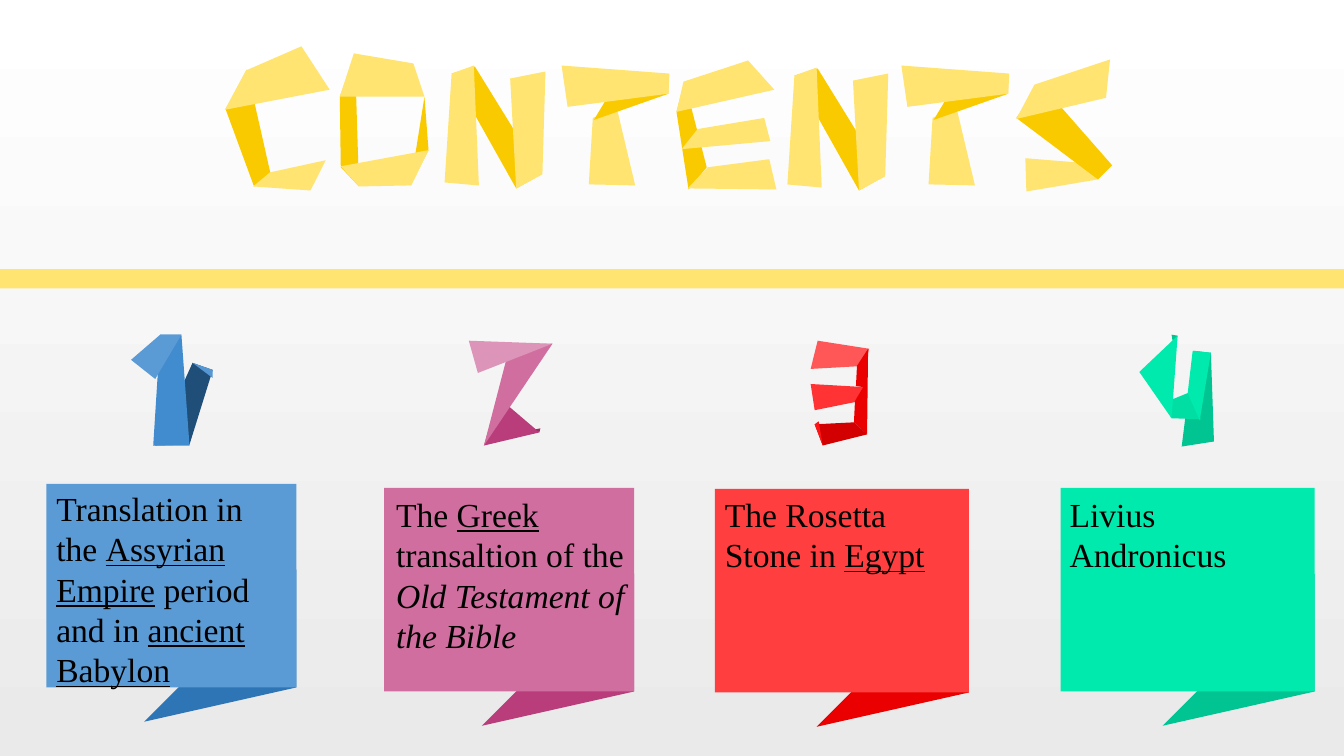
from dataclasses import dataclass

from pptx import Presentation
from pptx import util as u
from pptx.dml.color import RGBColor
from pptx.enum import shapes, text


@dataclass(frozen=True)
class Theme:
    font: str = "Times New Roman"
    body_size: int = 24
    ink: str = "000000"
    paper: tuple = ("FFFFFF", "EAEAEA")
    light: str = "FFE471"
    fold: str = "FACA00"
    blues: tuple = ("5B9BD5", "2E75B6", "1F4E79", "418BCF", "5597D3")
    pinks: tuple = ("D06E9F", "B93D7B", "DC94B8", "9A3266")
    reds: tuple = ("FF3F3F", "EA0000", "FF3333", "FF5757", "D20000", "FF1515")
    greens: tuple = ("00EAAD", "00C491", "00DEA4")


class SlideBuilder:
    def __init__(self, slide, theme):
        self.slide = slide
        self.theme = theme

    def background(self):
        fill = self.slide.background.fill
        fill.gradient()
        fill.gradient_angle = 270
        for stop, color in zip(fill.gradient_stops, self.theme.paper):
            stop.color.rgb = RGBColor.from_string(color)

    def group(self):
        return self.slide.shapes.add_group_shape().shapes

    def paint(self, shape, color):
        shape.shadow.inherit = False
        shape.fill.solid()
        shape.fill.fore_color.rgb = RGBColor.from_string(color)
        shape.line.fill.background()

    def rectangle(self, parent, left, top, width, height, color):
        box = [u.Inches(length) for length in (left, top, width, height)]
        self.paint(parent.add_shape(shapes.MSO_SHAPE.RECTANGLE, *box), color)

    def polygon(self, parent, color, points, dx=0, dy=0):
        corners = [(u.Inches(x + dx), u.Inches(y + dy)) for x, y in points]
        builder = parent.build_freeform(*corners[0])
        builder.add_line_segments(corners[1:], close=True)
        self.paint(builder.convert_to_shape(), color)

    def folded_figure(self, parent, pieces, dx=0, dy=0):
        for color, points in pieces:
            self.polygon(parent, color, points, dx, dy)

    def speech_card(self, left, top, width, colors):
        height, right = 2.02, left + width
        bottom = top + height
        card = self.group()
        tail = [(right, top + 0.85), (right - 1.51, bottom + 0.34), (right, bottom)]
        self.polygon(card, colors[1], tail)
        self.rectangle(card, left, top, width, height, colors[0])

    def caption(self, left, top, width, height, runs):
        box = [u.Inches(length) for length in (left, top, width, height)]
        frame = self.slide.shapes.add_textbox(*box).text_frame
        frame.word_wrap = True
        frame.auto_size = text.MSO_AUTO_SIZE.SHAPE_TO_FIT_TEXT
        paragraph = frame.paragraphs[0]
        for words, style in runs:
            run = paragraph.add_run()
            run.text = words
            run.font.name = self.theme.font
            run.font.size = u.Pt(self.theme.body_size)
            run.font.color.rgb = RGBColor.from_string(self.theme.ink)
            run.font.underline = style == "underline"
            run.font.italic = style == "italic"


THEME = Theme()
LIGHT, FOLD = THEME.light, THEME.fold
BLUES, PINKS, REDS, GREENS = THEME.blues, THEME.pinks, THEME.reds, THEME.greens

LETTERS = {
    "C": [
        (FOLD, [(2.45, 0.69), (2.68, 1.71), (2.52, 1.85), (2.24, 1.09)]),
        (LIGHT, [(2.44, 0.7), (2.99, 0.46), (3.27, 0.89), (2.23, 1.09)]),
        (LIGHT, [(2.68, 1.71), (3.23, 1.59), (3.08, 1.89), (2.51, 1.85)]),
    ],
    "O": [
        (FOLD, [(4.07, 1.84), (4.21, 0.96), (4.25, 1.49)]),
        (FOLD, [(3.52, 0.55), (3.56, 1.85), (3.38, 1.66), (3.37, 0.96)]),
        (LIGHT, [(3.51, 0.53), (4.1, 0.63), (4.21, 0.96), (3.37, 0.96)]),
        (LIGHT, [(3.38, 1.65), (4.25, 1.49), (4.08, 1.84), (3.56, 1.85)]),
    ],
    "N": [
        (FOLD, [(4.48, 0.73), (4.71, 0.66), (5.37, 1.73), (5.12, 1.87)]),
        (LIGHT, [(5.06, 0.78), (5.41, 0.71), (5.38, 1.73), (5.12, 1.87)]),
        (LIGHT, [(4.48, 0.73), (4.7, 0.65), (4.75, 1.84), (4.41, 1.81)]),
    ],
    "T": [
        (LIGHT, [(5.84, 1.83), (5.88, 1.17), (6.12, 1.08), (6.3, 1.84)]),
        (FOLD, [(6.04, 0.94), (6.63, 0.74), (6.63, 0.93), (5.89, 1.19)]),
        (LIGHT, [(5.57, 0.65), (6.64, 0.73), (6.63, 0.93), (5.63, 1.06)]),
    ],
    "E": [
        (FOLD, [(6.83, 1.88), (6.71, 1.11), (6.79, 0.81), (7.01, 1.66)]),
        (LIGHT, [(6.78, 0.81), (7.42, 0.6), (7.68, 0.89), (6.71, 1.11)]),
        (LIGHT, [(7.02, 1.66), (7.63, 1.58), (7.7, 1.88), (6.82, 1.87)]),
        (LIGHT, [(6.92, 1.28), (7.58, 1.17), (7.64, 1.4), (6.76, 1.48)]),
    ],
    "S": [
        (LIGHT, [(10.17, 1.57), (11.03, 1.64), (10.89, 1.78), (10.18, 1.9)]),
        (FOLD, [(10.32, 0.83), (11.03, 1.64), (10.89, 1.78), (10.08, 1.17)]),
        (LIGHT, [(10.26, 0.84), (11.01, 0.59), (10.97, 0.97), (10.08, 1.18)]),
    ],
}
TITLE = [("C", 0, 0), ("O", 0, 0), ("N", 0, 0), ("T", 0, 0), ("E", 0, 0),
         ("N", 3.4, 0.02), ("T", 3.37, 0), ("S", 0, 0)]

NUMBERS = [
    [
        (BLUES[2], [(1.54, 4.42), (1.91, 3.6), (2.11, 3.67), (1.88, 4.41)]),
        (BLUES[3], [(1.59, 3.32), (1.8, 3.32), (1.88, 4.42), (1.52, 4.42)]),
        (BLUES[0], [(1.3, 3.57), (1.59, 3.32), (1.8, 3.32), (1.54, 3.76)]),
        (BLUES[4], [(2.11, 3.75), (1.91, 3.6), (2.11, 3.67)]),
    ],
    [
        (PINKS[1], [(4.94, 3.94), (5.35, 4.29), (4.8, 4.42)]),
        (PINKS[0], [(5.48, 3.41), (4.8, 4.42), (5.06, 3.42)]),
        (PINKS[2], [(4.65, 3.38), (5.48, 3.41), (4.74, 3.7)]),
        (PINKS[3], [(5.35, 4.29), (5.31, 4.26), (5.36, 4.25)]),
    ],
    [
        (REDS[2], [(8.04, 3.81), (8.56, 3.84), (8.48, 3.99), (8.08, 4.07)]),
        (REDS[3], [(8.11, 3.38), (8.62, 3.46), (8.58, 3.63), (8.04, 3.66)]),
        (REDS[1], [(8.61, 3.46), (8.6, 4.31), (8.47, 4.19), (8.48, 3.98),
                   (8.56, 3.84), (8.49, 3.83), (8.5, 3.63)]),
        (REDS[4], [(8.08, 4.21), (8.47, 4.19), (8.6, 4.31), (8.16, 4.42)]),
        (REDS[5], [(8.08, 4.21), (8.12, 4.18), (8.16, 4.42)]),
    ],
    [
        (GREENS[1], [(11.64, 3.44), (11.62, 3.32), (11.68, 3.33)]),
        (GREENS[1], [(11.84, 3.48), (12.01, 3.5), (12.04, 4.38), (11.72, 4.43)]),
        (GREENS[2], [(11.56, 3.99), (11.78, 3.9), (11.91, 4.16), (11.62, 4.15)]),
        (GREENS[0], [(11.68, 3.33), (11.62, 4.15), (11.3, 3.69)]),
        (GREENS[0], [(11.83, 3.48), (12.01, 3.5), (11.9, 4.17), (11.78, 3.9)]),
    ],
]

CARDS = [(0.46, 4.8, 2.48, BLUES), (3.81, 4.84, 2.48, PINKS),
         (7.09, 4.85, 2.52, REDS), (10.52, 4.84, 2.52, GREENS)]

CAPTIONS = [
    (0.46, 4.79, 2.49, 2.12, [
        ("Translation in the ", ""), ("Assyrian Empire", "underline"),
        (" period and in ", ""), ("ancient Babylon", "underline")]),
    (3.83, 4.85, 2.47, 1.72, [
        ("The ", ""), ("Greek", "underline"), (" transaltion of the", ""),
        (" Old Testament of the Bible", "italic")]),
    (7.09, 4.85, 2.52, 0.91, [
        ("The Rosetta Stone in ", ""), ("Egypt", "underline")]),
    (10.51, 4.85, 2.52, 0.91, [("Livius Andronicus", "")]),
]


def main():
    presentation = Presentation()
    presentation.slide_width = u.Inches(13.33)
    presentation.slide_height = u.Inches(7.5)
    slide = presentation.slides.add_slide(presentation.slide_layouts[6])
    builder = SlideBuilder(slide, THEME)
    builder.background()
    builder.rectangle(slide.shapes, 0, 2.67, 13.33, 0.19, LIGHT)
    for pieces in NUMBERS:
        builder.folded_figure(builder.group(), pieces)
    for card in CARDS:
        builder.speech_card(*card)
    title = builder.group()
    for letter, dx, dy in TITLE:
        builder.folded_figure(title, LETTERS[letter], dx, dy)
    for caption in CAPTIONS:
        builder.caption(*caption)
    presentation.save("out.pptx")


if __name__ == "__main__":
    main()
